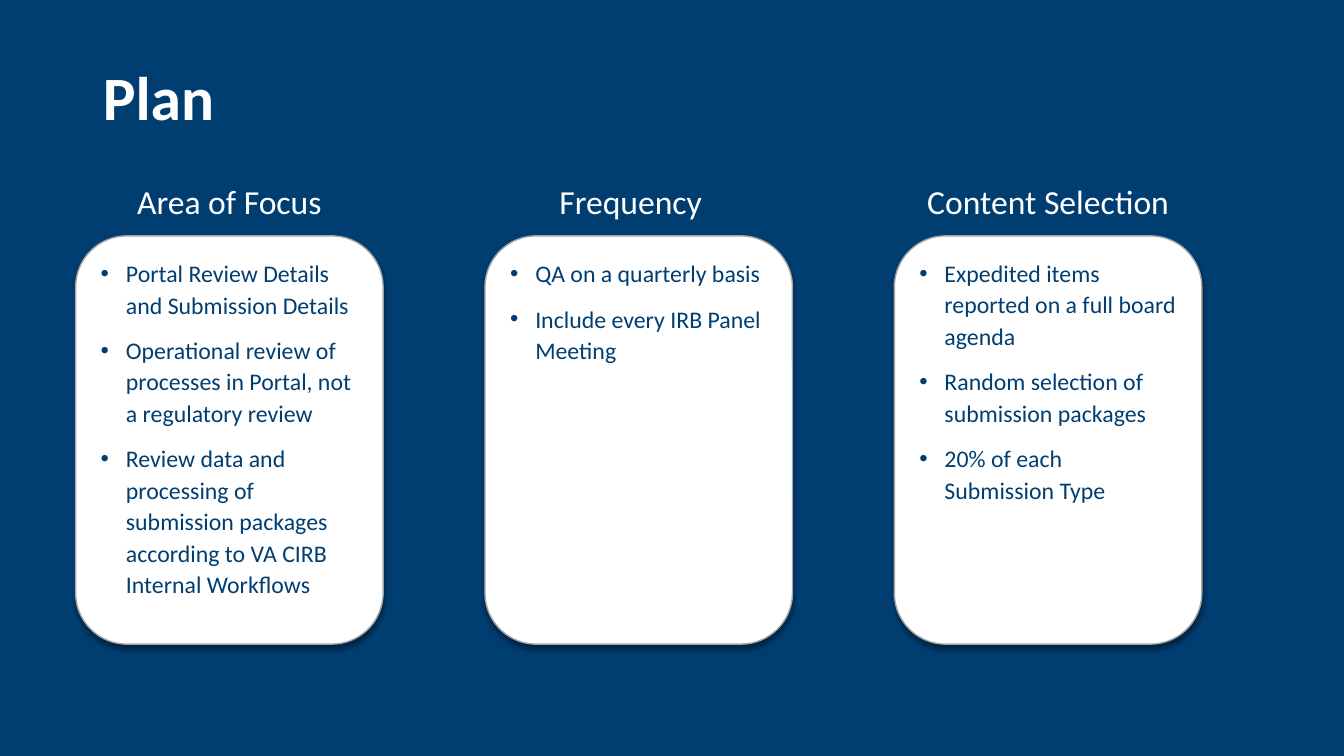
from lxml.etree import SubElement
from pptx import Presentation
from pptx.dml.color import RGBColor
from pptx.enum.shapes import MSO_SHAPE
from pptx.enum.text import MSO_ANCHOR, MSO_AUTO_SIZE, PP_ALIGN
from pptx.oxml import parse_xml
from pptx.oxml.ns import nsdecls, qn
from pptx.util import Inches, Pt

TITLE = "Plan"
COLUMNS = [
    ("Area of Focus", [
        "Portal Review Details and Submission Details",
        "Operational review of processes in Portal, not a regulatory review",
        "Review data and processing of submission packages according to VA CIRB Internal Workflows",
    ]),
    ("Frequency", [
        "QA on a quarterly basis",
        "Include every IRB Panel Meeting",
    ]),
    ("Content Selection", [
        "Expedited items reported on a full board agenda",
        "Random selection of submission packages",
        "20% of each Submission Type",
    ]),
]

NAVY = RGBColor(0x00, 0x3E, 0x72)
WHITE = RGBColor(0xFF, 0xFF, 0xFF)
GREY = RGBColor(0xA5, 0xA5, 0xA5)

TITLE_BOX = (0.92, 0.59, 9.48, 0.82)
FIRST_LEFT, COLUMN_STEP, COLUMN_WIDTH = 0.75, 4.06, 3.05
HEADING_TOP, HEADING_HEIGHT = 1.79, 0.46
CARD_TOP, CARD_HEIGHT = 2.34, 4.05
HEADING_SHIFTS = (0, -0.08, 0)

TITLE_FONT = {"name": "Calibri", "size": Pt(44), "bold": True}
HEADING_FONT = {"name": "Calibri", "size": Pt(24), "bold": False}
ITEM_FONT = {"name": "Calibri", "size": Pt(17), "bold": False}

ROUNDED = f'<a:prstGeom {nsdecls("a")} prst="roundRect"><a:avLst/></a:prstGeom>'
SHADOW = f"""<a:effectLst {nsdecls("a")}>
  <a:outerShdw blurRad="{Pt(4)}" dist="{Pt(3)}" dir="5400000" algn="t" rotWithShape="0">
    <a:srgbClr val="000000"><a:alpha val="40000"/></a:srgbClr>
  </a:outerShdw>
</a:effectLst>"""


def place(box, bounds):
    box.left, box.top, box.width, box.height = map(Inches, bounds)


def write(box, lines, font, color, line_spacing, align=PP_ALIGN.LEFT,
          anchor=MSO_ANCHOR.TOP, bulleted=False):
    frame = box.text_frame
    frame.text = "\n".join(lines)
    frame.word_wrap = True
    frame.auto_size = MSO_AUTO_SIZE.NONE
    frame.vertical_anchor = anchor
    for number, paragraph in enumerate(frame.paragraphs):
        if bulleted:
            properties = paragraph._p.get_or_add_pPr()
            properties.set("marL", str(Inches(0.25)))
            properties.set("indent", str(Inches(-0.25)))
            SubElement(properties, qn("a:buFont"), typeface="Arial")
            SubElement(properties, qn("a:buChar"), char="•")
        paragraph.alignment = align
        paragraph.line_spacing = line_spacing
        paragraph.space_before = Pt(10 if number else 0)
        for run in paragraph.runs:
            for attribute, value in font.items():
                setattr(run.font, attribute, value)
            run.font.color.rgb = color


def style_card(card):
    """Give a list its white rounded panel with a soft shadow."""
    properties = card._element.spPr
    if properties.find(qn("a:prstGeom")) is None:
        properties.append(parse_xml(ROUNDED))
    card.fill.solid()
    card.fill.fore_color.rgb = WHITE
    card.line.color.rgb = GREY
    card.line.width = Pt(1)
    properties.append(parse_xml(SHADOW))


def main():
    deck = Presentation()
    deck.slide_width, deck.slide_height = Inches(13.33), Inches(7.5)
    slide = deck.slides.add_slide(deck.slide_layouts.get_by_name("Comparison"))
    slide.background.fill.solid()
    slide.background.fill.fore_color.rgb = NAVY

    title, *bodies = slide.placeholders
    place(title, TITLE_BOX)
    write(title, [TITLE], TITLE_FONT, WHITE, 0.9, anchor=MSO_ANCHOR.MIDDLE)

    for column, (heading_text, items) in enumerate(COLUMNS):
        if bodies:
            heading, card = bodies.pop(0), bodies.pop(0)
        else:
            heading = slide.shapes.add_textbox(0, 0, 0, 0)
            card = slide.shapes.add_shape(MSO_SHAPE.ROUNDED_RECTANGLE, 0, 0, 0, 0)
        left = FIRST_LEFT + column * COLUMN_STEP
        place(heading, (left + HEADING_SHIFTS[column], HEADING_TOP,
                        COLUMN_WIDTH, HEADING_HEIGHT))
        write(heading, [heading_text], HEADING_FONT, WHITE, 0.9, PP_ALIGN.CENTER)
        place(card, (left, CARD_TOP, COLUMN_WIDTH, CARD_HEIGHT))
        style_card(card)
        write(card, items, ITEM_FONT, NAVY, 1.1, bulleted=True)

    deck.save("out.pptx")


if __name__ == "__main__":
    main()
